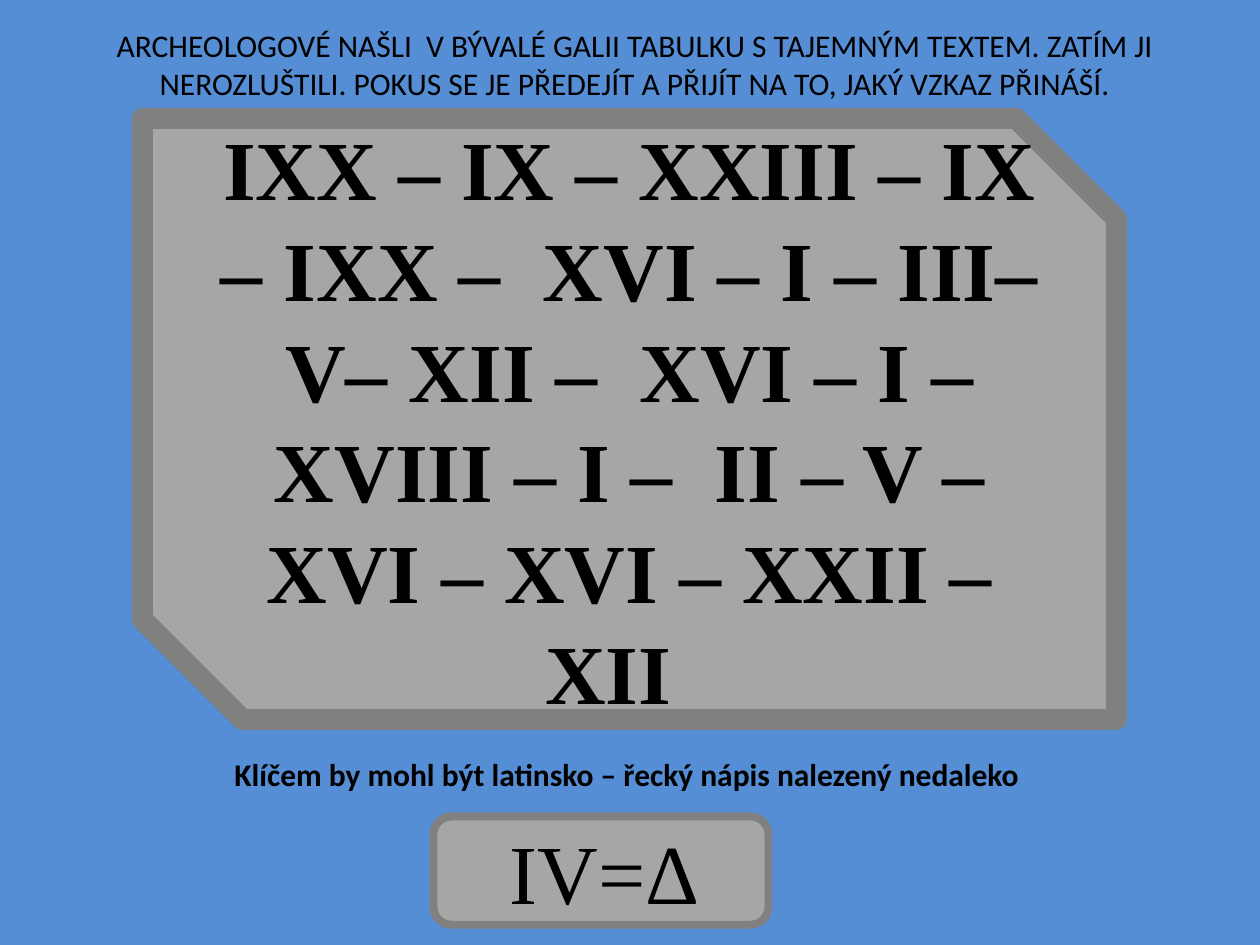
"""Build the slide with the mysterious Roman numeral tablet."""
from pptx import Presentation
from pptx.dml.color import RGBColor
from pptx.enum.shapes import MSO_SHAPE
from pptx.enum.text import MSO_ANCHOR, MSO_AUTO_SIZE, PP_ALIGN
from pptx.util import Inches, Pt

SKY = RGBColor(0x55, 0x8E, 0xD5)
STONE = RGBColor(0xA6, 0xA6, 0xA6)
STONE_EDGE = RGBColor(0x80, 0x80, 0x80)
INK = RGBColor(0, 0, 0)

COLUMNS, ROWS = 100, 75
BLANK_LAYOUT = 6

BODY = {"name": "Calibri", "size": Pt(18), "bold": False}
BODY_BOLD = {**BODY, "bold": True}
CARVED = {"name": "Times New Roman", "size": Pt(48), "bold": False}
CARVED_BOLD = {**CARVED, "bold": True}

TASK = (
    "ARCHEOLOGOVÉ NAŠLI  V BÝVALÉ GALII TABULKU S TAJEMNÝM TEXTEM. ZATÍM JI "
    "NEROZLUŠTILI. POKUS SE JE PŘEDEJÍT A PŘIJÍT NA TO, JAKÝ VZKAZ PŘINÁŠÍ."
)
CIPHER = (
    "IXX – IX – XXIII – IX – IXX –  XVI – I – III– V– XII –  XVI – I – "
    "XVIII – I –  II – V – XVI – XVI – XXII – XII  "
)
HINT = "Klíčem by mohl být latinsko – řecký nápis nalezený nedaleko "
KEY = "IV=Δ"


class SlideBuilder:
    """Holds the style and the current slide, placed on a grid of columns and rows."""

    def __init__(self, presentation):
        self.column = presentation.slide_width / COLUMNS
        self.row = presentation.slide_height / ROWS
        self.slide = presentation.slides.add_slide(
            presentation.slide_layouts[BLANK_LAYOUT]
        )
        background = self.slide.background.fill
        background.solid()
        background.fore_color.rgb = SKY

    def place(self, left, top, width, height):
        """Turn grid units into slide lengths."""
        return (
            round(left * self.column),
            round(top * self.row),
            round(width * self.column),
            round(height * self.row),
        )

    def add_runs(self, shape, runs, anchor):
        """Fill one centred paragraph with (text, format) runs."""
        frame = shape.text_frame
        frame.word_wrap = True
        frame.vertical_anchor = anchor
        paragraph = frame.paragraphs[0]
        paragraph.alignment = PP_ALIGN.CENTER
        for text, style in runs:
            run = paragraph.add_run()
            run.text = text
            run.font.color.rgb = INK
            for attribute, value in style.items():
                setattr(run.font, attribute, value)

    def caption(self, area, text, style):
        """Add a text box that grows with its text."""
        box = self.slide.shapes.add_textbox(*self.place(*area))
        self.add_runs(box, [(text, style)], MSO_ANCHOR.TOP)
        box.text_frame.auto_size = MSO_AUTO_SIZE.SHAPE_TO_FIT_TEXT

    def tablet(self, kind, area, edge_width, runs):
        """Add a stone tablet with carved text."""
        shape = self.slide.shapes.add_shape(kind, *self.place(*area))
        shape.shadow.inherit = False
        shape.fill.solid()
        shape.fill.fore_color.rgb = STONE
        shape.line.color.rgb = STONE_EDGE
        shape.line.width = Pt(edge_width)
        self.add_runs(shape, runs, MSO_ANCHOR.MIDDLE)


def main():
    """Build and save the presentation."""
    presentation = Presentation()
    presentation.slide_width = Inches(10)
    presentation.slide_height = Inches(7.5)
    builder = SlideBuilder(presentation)
    builder.tablet(
        MSO_SHAPE.SNIP_2_DIAG_RECTANGLE,
        (11.3, 9.4, 77.3, 47.7),
        12,
        [(CIPHER, CARVED_BOLD)],
    )
    builder.caption((3.9, 1.6, 93, 7.1), TASK, BODY)
    builder.caption((9.8, 59.4, 80.5, 4), HINT, BODY_BOLD)
    builder.tablet(
        MSO_SHAPE.ROUNDED_RECTANGLE,
        (34.4, 64.8, 26.6, 8.6),
        4.5,
        [(" ", BODY), (KEY, CARVED)],
    )
    presentation.save("out.pptx")


if __name__ == "__main__":
    main()
